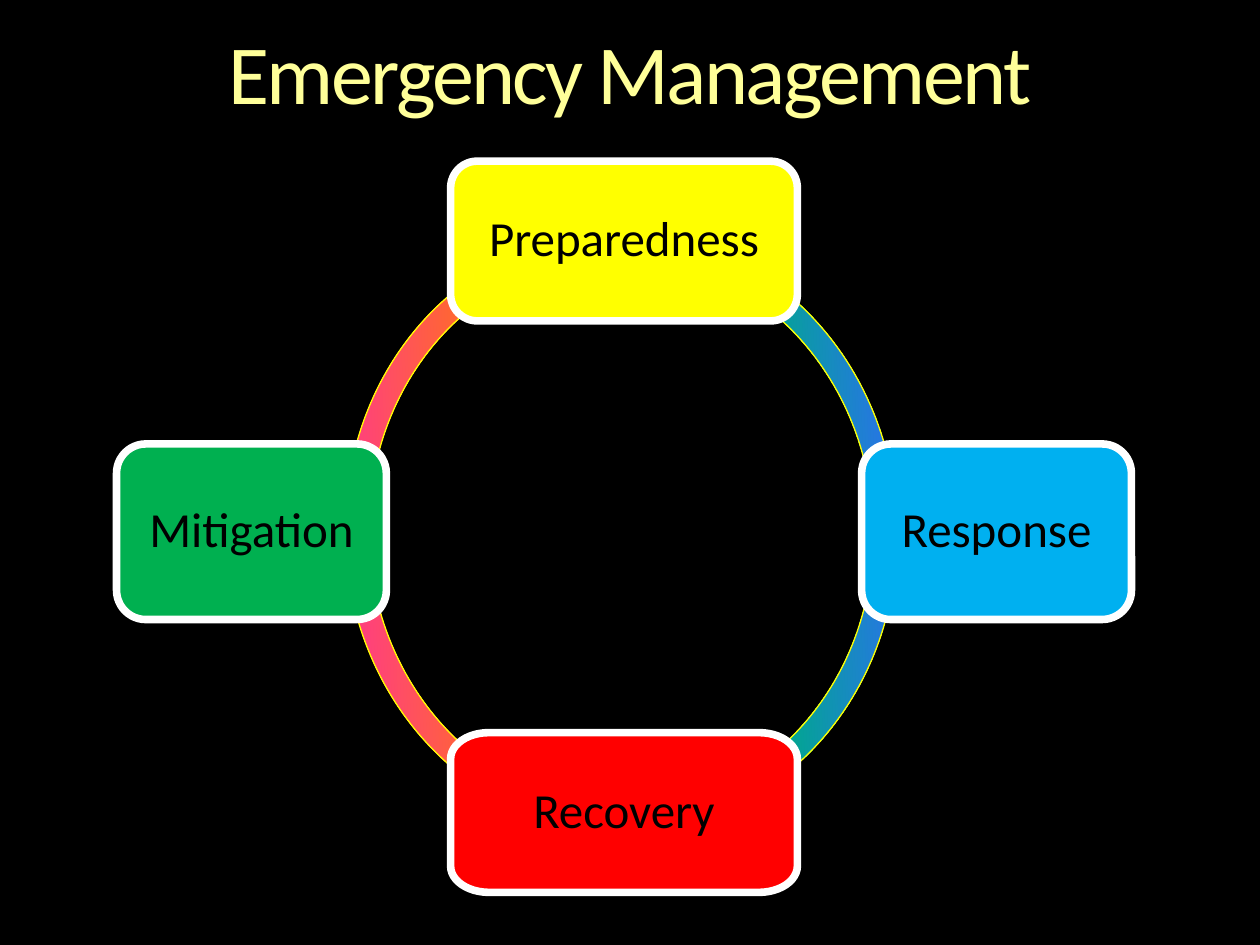
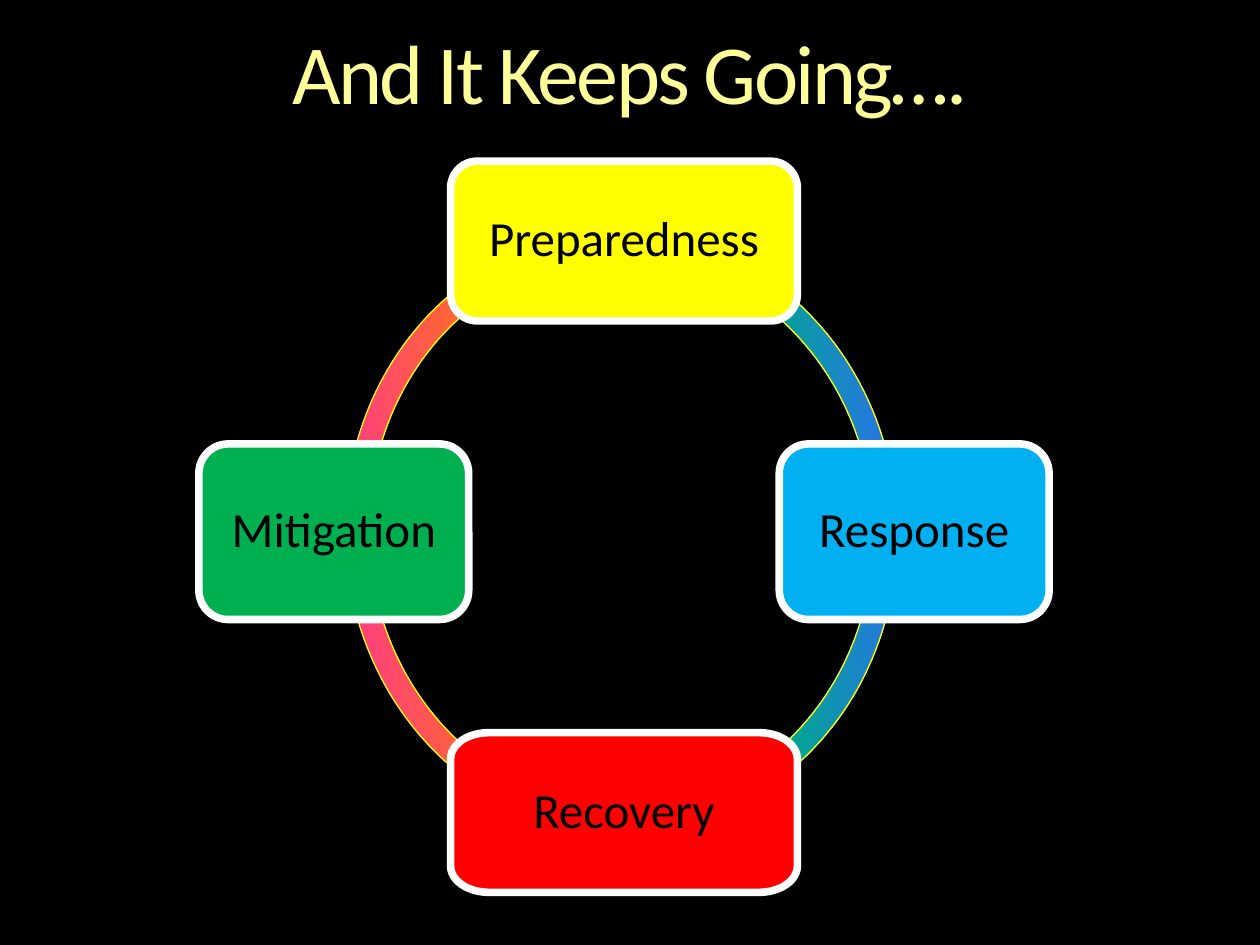
import math

import lxml.etree
import pptx
import pptx.dml.color
import pptx.enum.shapes
import pptx.enum.text
import pptx.oxml.ns
import pptx.util

Cm = pptx.util.Cm
Pt = pptx.util.Pt
qn = pptx.oxml.ns.qn
SHAPES = pptx.enum.shapes.MSO_SHAPE

FONT = "Calibri"
BLACK, WHITE, YELLOW = "000000", "FFFFFF", "FFFF00"
RED, GREEN, BLUE = "FF0000", "00B050", "00B0F0"
TITLE_STOPS = [(0, "FFFFB9"), (36, "FFFF99"), (86, "F6AE1E")]
RING_STOPS = [(0, "FF3399"), (25, "FF6633"), (50, YELLOW),
              (75, "01A78F"), (100, "3366FF")]

# Lengths in centimetres
CENTRE_X, CENTRE_Y = 12.58, 10.72
RING_X, RING_WIDTH, RING_HEIGHT = 12.52, 12.09, 11.13
WIDE_BOX = (6.99, 3.22)
SIDE_BOX = (5.44, 3.54)
PREPAREDNESS_Y, RECOVERY_Y = 4.86, 16.38
RECOVERY_CORNER = (0.77, 0.53)


def colour(hex_code):
    return pptx.dml.color.RGBColor.from_string(hex_code)


def fill_gradient(fill, properties, stops, angle):
    """Give the owner of properties a linear gradient; stops are in percent."""
    fill.background()
    gradient = lxml.etree.Element(qn("a:gradFill"), rotWithShape="1")
    stop_list = lxml.etree.SubElement(gradient, qn("a:gsLst"))
    for percent, hex_code in stops:
        stop = lxml.etree.SubElement(stop_list, qn("a:gs"), pos=str(percent * 1000))
        lxml.etree.SubElement(stop, qn("a:srgbClr"), val=hex_code)
    lxml.etree.SubElement(gradient, qn("a:lin"), ang=str(angle * 60000), scaled="0")
    properties.replace(properties.find(qn("a:noFill")), gradient)


def write_line(frame, text, size):
    """Put one centred line in a text frame and return its run."""
    para = frame.paragraphs[0]
    para.alignment = pptx.enum.text.PP_ALIGN.CENTER
    para.line_spacing = 0.9
    span = para.add_run()
    span.text = text
    span.font.name = FONT
    span.font.size = Pt(size)
    return span


def add_titled_page(deck, text):
    page = deck.slides.add_slide(deck.slide_layouts.get_by_name("Title Only"))
    title = page.shapes.title
    title.left, title.top = Cm(0), Cm(0.64)
    title.width, title.height = deck.slide_width, Cm(1.85)
    frame = title.text_frame
    frame.margin_left = frame.margin_right = frame.margin_top = frame.margin_bottom = 0
    frame.vertical_anchor = pptx.enum.text.MSO_ANCHOR.TOP
    frame.auto_size = pptx.enum.text.MSO_AUTO_SIZE.SHAPE_TO_FIT_TEXT
    span = write_line(frame, text, 48)
    properties = span.font._element
    properties.set("spc", "-150")
    fill_gradient(span.font.fill, properties, TITLE_STOPS, 90)
    return page


def add_ring(page):
    ring = page.shapes.add_shape(
        SHAPES.DONUT, Cm(RING_X - RING_WIDTH / 2), Cm(CENTRE_Y - RING_HEIGHT / 2),
        Cm(RING_WIDTH), Cm(RING_HEIGHT))
    ring.adjustments[0] = 0.043
    ring.rotation = 87.1
    ring.shadow.inherit = False
    fill_gradient(ring.fill, ring._element.spPr, RING_STOPS, 270)
    ring.line.color.rgb = colour(YELLOW)
    ring.line.width = Pt(0.75)


def add_oval_cornered_shape(page, left, top, size, corner):
    """Draw a rectangle whose corners are quarter ellipses."""
    (width, height), (radius_x, radius_y) = size, corner
    points = []
    for quarter in range(4):
        corner_x = left + (width - radius_x if quarter in (0, 3) else radius_x)
        corner_y = top + (height - radius_y if quarter in (0, 1) else radius_y)
        for step in range(13):
            angle = math.radians(90 * quarter + 7.5 * step)
            points.append((Cm(corner_x + radius_x * math.cos(angle)),
                           Cm(corner_y + radius_y * math.sin(angle))))
    outline = page.shapes.build_freeform(*points[0])
    outline.add_line_segments(points[1:], close=True)
    return outline.convert_to_shape()


def add_phase(page, name, fill, centre_x, centre_y, size, corner=None):
    """Add a phase box; corner gives separate horizontal and vertical radii."""
    width, height = size
    left, top = centre_x - width / 2, centre_y - height / 2
    if corner:
        box = add_oval_cornered_shape(page, left, top, size, corner)
    else:
        box = page.shapes.add_shape(
            SHAPES.ROUNDED_RECTANGLE, Cm(left), Cm(top), Cm(width), Cm(height))
    box.shadow.inherit = False
    box.fill.solid()
    box.fill.fore_color.rgb = colour(fill)
    box.line.color.rgb = colour(WHITE)
    box.line.width = Pt(4.33)
    frame = box.text_frame
    frame.word_wrap = True
    frame.vertical_anchor = pptx.enum.text.MSO_ANCHOR.MIDDLE
    frame.margin_left = frame.margin_right = Cm(0.2)
    frame.margin_top = frame.margin_bottom = Cm(0.2)
    write_line(frame, name, 28).font.color.rgb = colour(BLACK)


def add_cycle_page(deck, title, side_distance):
    """Add a cycle page with its side boxes side_distance from the centre."""
    page = add_titled_page(deck, title)
    add_ring(page)
    add_phase(page, "Preparedness", YELLOW, CENTRE_X, PREPAREDNESS_Y, WIDE_BOX)
    add_phase(page, "Response", BLUE, CENTRE_X + side_distance, CENTRE_Y, SIDE_BOX)
    add_phase(page, "Recovery", RED, CENTRE_X, RECOVERY_Y, WIDE_BOX, RECOVERY_CORNER)
    add_phase(page, "Mitigation", GREEN, CENTRE_X - side_distance, CENTRE_Y, SIDE_BOX)


def main():
    deck = pptx.Presentation()
    deck.slide_width, deck.slide_height = Cm(25.4), Cm(19.05)
    background = deck.slide_master.background.fill
    background.solid()
    background.fore_color.rgb = colour(BLACK)
    add_cycle_page(deck, "Emergency Management", 7.51)
    add_cycle_page(deck, "And It Keeps Going….", 5.85)
    deck.save("out.pptx")


if __name__ == "__main__":
    main()
